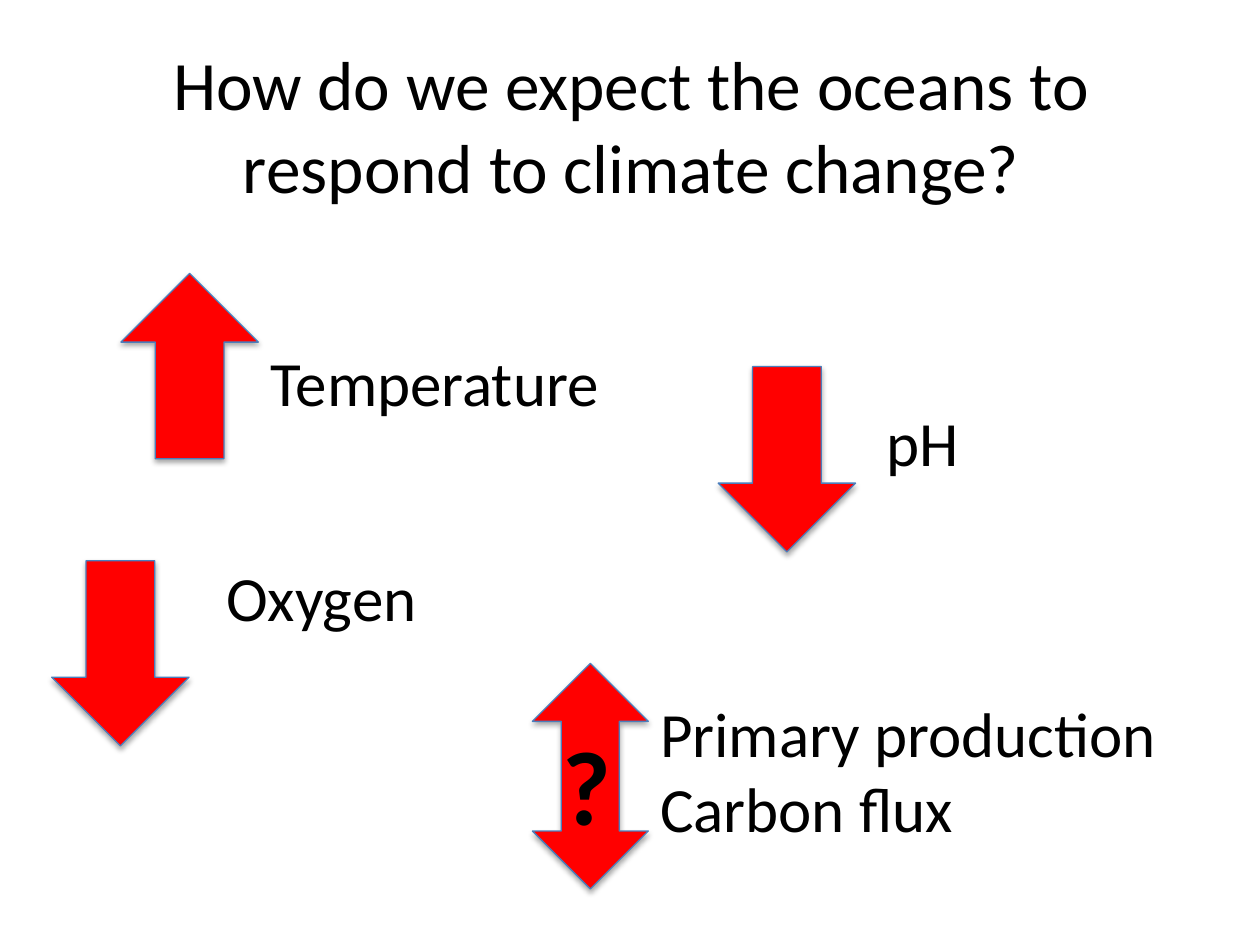
import dataclasses

import pptx
import pptx.dml.color
import pptx.enum.shapes
import pptx.enum.text
import pptx.util

COLUMNS, ROWS = 100, 75
CELL = pptx.util.Inches(0.1)
UP, DOWN = 270, 90


@dataclasses.dataclass(frozen=True)
class Theme:
    """Hold the colours and type sizes of the slide."""
    font: str = "Calibri"
    text: str = "000000"
    arrow: str = "FF0000"
    outline: str = "4B7EBC"
    outline_width: float = 0.75
    title_size: float = 39.6
    label_size: float = 36
    mark_size: float = 60


THEME = Theme()


def color(value):
    """Turn a hex value into a colour."""
    return pptx.dml.color.RGBColor.from_string(value)


def cells(*counts):
    """Turn counts of grid cells into lengths."""
    return [round(count * CELL) for count in counts]


def add_run(paragraph, text, size, bold=None):
    """Add one formatted run to a paragraph."""
    run = paragraph.add_run()
    run.text = text
    run.font.name = THEME.font
    run.font.size = pptx.util.Pt(size)
    run.font.bold = bold
    run.font.color.rgb = color(THEME.text)


def set_title(slide, text, box):
    """Place and fill the title placeholder."""
    title = slide.shapes.title
    title.left, title.top, title.width, title.height = cells(*box)
    title.text_frame.vertical_anchor = pptx.enum.text.MSO_ANCHOR.MIDDLE
    paragraph = title.text_frame.paragraphs[0]
    paragraph.alignment = pptx.enum.text.PP_ALIGN.CENTER
    add_run(paragraph, text, THEME.title_size)


def add_arrow(slide, kind, box, rotation):
    """Add a turned block arrow that keeps the theme's soft shadow."""
    arrow = slide.shapes.add_shape(kind, *cells(*box))
    arrow.rotation = rotation
    arrow.fill.solid()
    arrow.fill.fore_color.rgb = color(THEME.arrow)
    arrow.line.color.rgb = color(THEME.outline)
    arrow.line.width = pptx.util.Pt(THEME.outline_width)


def add_label(slide, lines, box, size=THEME.label_size, bold=None):
    """Add a wrapping text box with one paragraph for each line."""
    frame = slide.shapes.add_textbox(*cells(*box)).text_frame
    frame.word_wrap = True
    frame.auto_size = pptx.enum.text.MSO_AUTO_SIZE.SHAPE_TO_FIT_TEXT
    for index, line in enumerate(lines):
        paragraph = frame.add_paragraph() if index else frame.paragraphs[0]
        add_run(paragraph, line, size, bold)


def main():
    """Build and save the slide."""
    presentation = pptx.Presentation()
    presentation.slide_width, presentation.slide_height = cells(COLUMNS, ROWS)
    slide = presentation.slides.add_slide(presentation.slide_layouts[5])
    set_title(slide, "How do we expect the oceans to respond to climate change?",
              (5.1, 3.6, 90, 12.5))

    kinds = pptx.enum.shapes.MSO_SHAPE
    trends = [
        ("Temperature", UP, (7.7, 23.6), (20.5, 26.8, 45.1)),
        ("pH", DOWN, (55.1, 31), (69.4, 31.5, 23)),
        ("Oxygen", DOWN, (2.2, 46.4), (17, 43.8, 30.2)),
    ]
    for name, rotation, corner, label in trends:
        add_arrow(slide, kinds.RIGHT_ARROW, (*corner, 14.7, 10.9), rotation)
        add_label(slide, [name], (*label, 7.1))

    add_arrow(slide, kinds.LEFT_RIGHT_ARROW, (37.9, 57, 17.9, 9.2), UP)
    add_label(slide, ["?"], (43.7, 56.7, 4.6, 11.1), THEME.mark_size, bold=True)
    add_label(slide, ["Primary production", "Carbon flux"], (51.4, 54.6, 45.4, 13.1))
    presentation.save("out.pptx")


if __name__ == "__main__":
    main()
